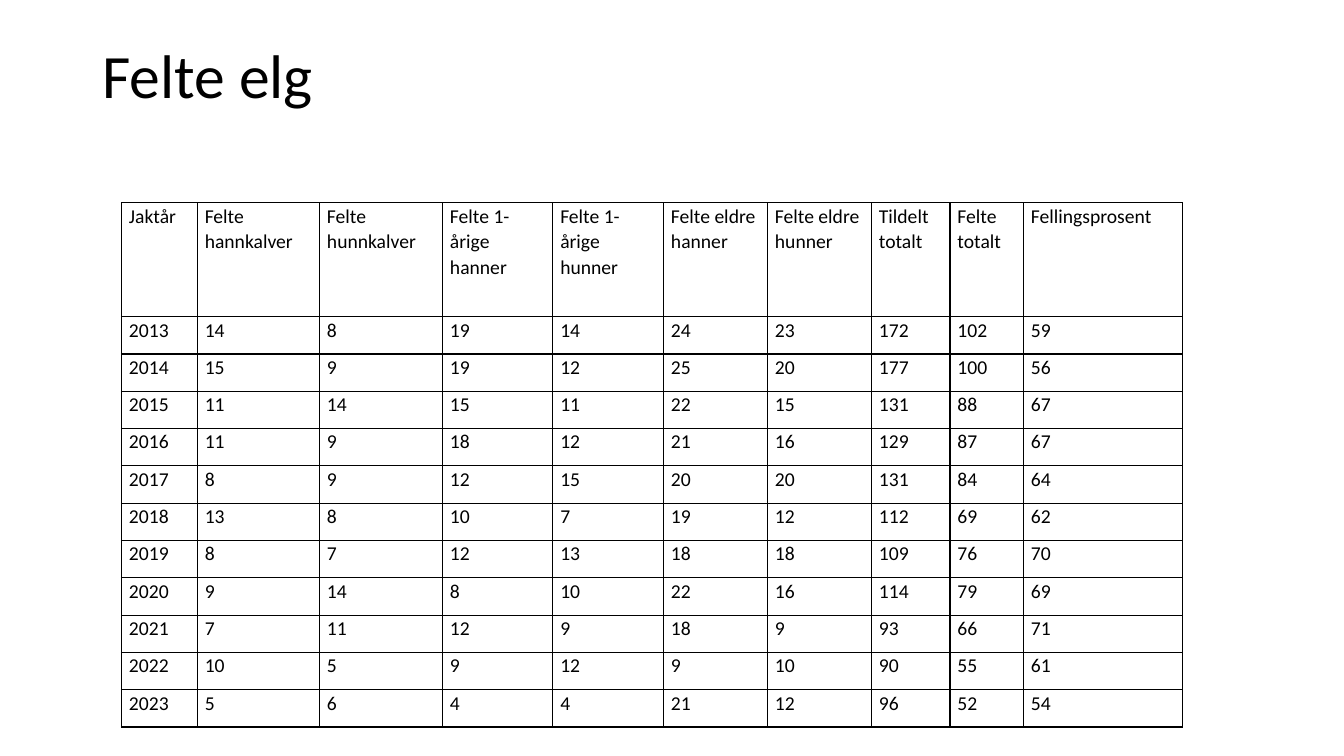
from lxml import etree
from pptx import Presentation
from pptx.dml.color import RGBColor
from pptx.enum.text import MSO_ANCHOR, MSO_AUTO_SIZE, PP_ALIGN
from pptx.oxml.ns import qn
from pptx.util import Cm, Pt

TOP = MSO_ANCHOR.TOP
LEFT = PP_ALIGN.LEFT
NO_FIT = MSO_AUTO_SIZE.NONE
FONT = "Calibri"
COLORS = {"text": "000000", "line": "000000"}

WIDTHS = [1.91, 3.08, 3.1, 2.78, 2.79, 2.62, 2.62, 1.98, 1.85, 4.02]
HEAD_H, ROW_H = 2.87, 0.94

HEADS = [
    "Jaktår", "Felte hannkalver", "Felte hunnkalver", "Felte 1-årige hanner",
    "Felte 1-årige hunner", "Felte eldre hanner", "Felte eldre hunner",
    "Tildelt totalt", "Felte totalt", "Fellingsprosent",
]
YEARS = [
    [2013, 14, 8, 19, 14, 24, 23, 172, 102, 59],
    [2014, 15, 9, 19, 12, 25, 20, 177, 100, 56],
    [2015, 11, 14, 15, 11, 22, 15, 131, 88, 67],
    [2016, 11, 9, 18, 12, 21, 16, 129, 87, 67],
    [2017, 8, 9, 12, 15, 20, 20, 131, 84, 64],
    [2018, 13, 8, 10, 7, 19, 12, 112, 69, 62],
    [2019, 8, 7, 12, 13, 18, 18, 109, 76, 70],
    [2020, 9, 14, 8, 10, 22, 16, 114, 79, 69],
    [2021, 7, 11, 12, 9, 18, 9, 93, 66, 71],
    [2022, 10, 5, 9, 12, 9, 10, 90, 55, 61],
    [2023, 5, 6, 4, 4, 21, 12, 96, 52, 54],
]


def style(para, size, spacing):
    para.alignment = LEFT
    para.line_spacing = spacing
    para.font.name = FONT
    para.font.size = Pt(size)
    para.font.color.rgb = RGBColor.from_string(COLORS["text"])


def set_title(slide, text):
    title = slide.shapes.title
    title.left, title.top = Cm(2.33), Cm(1.01)
    title.width, title.height = Cm(29.21), Cm(3.68)
    frame = title.text_frame
    frame.text = text
    frame.auto_size = NO_FIT
    frame.vertical_anchor = TOP
    style(frame.paragraphs[0], 44, 0.9)


def add_border(cell):
    """Draw a thin line on all four sides; call before setting the fill."""
    props = cell._tc.get_or_add_tcPr()
    for side in ("lnL", "lnR", "lnT", "lnB"):
        line = etree.SubElement(props, qn("a:" + side), w=str(Pt(1)))
        fill = etree.SubElement(line, qn("a:solidFill"))
        etree.SubElement(fill, qn("a:srgbClr"), val=COLORS["line"])


def fill_cell(cell, value):
    cell.text = str(value)
    cell.margin_left = cell.margin_right = Cm(0.19)
    cell.margin_top = cell.margin_bottom = 0
    cell.vertical_anchor = TOP
    para = cell.text_frame.paragraphs[0]
    style(para, 14, 1.07)
    para.space_after = Pt(8)
    add_border(cell)
    cell.fill.background()


def add_grid(slide, rows):
    heights = [HEAD_H] + [ROW_H] * (len(rows) - 1)
    table = slide.shapes.add_table(
        len(rows), len(WIDTHS), Cm(3.06), Cm(5.11),
        Cm(sum(WIDTHS)), Cm(sum(heights))).table
    table.first_row = table.horz_banding = False
    for col, width in zip(table.columns, WIDTHS):
        col.width = Cm(width)
    for row, height, values in zip(table.rows, heights, rows):
        row.height = Cm(height)
        for cell, value in zip(row.cells, values):
            fill_cell(cell, value)


def main():
    prs = Presentation()
    prs.slide_width, prs.slide_height = Cm(33.87), Cm(19.05)
    slide = prs.slides.add_slide(prs.slide_layouts.get_by_name("Title Only"))
    set_title(slide, "Felte elg")
    add_grid(slide, [HEADS] + YEARS)
    prs.save("out.pptx")


if __name__ == "__main__":
    main()
